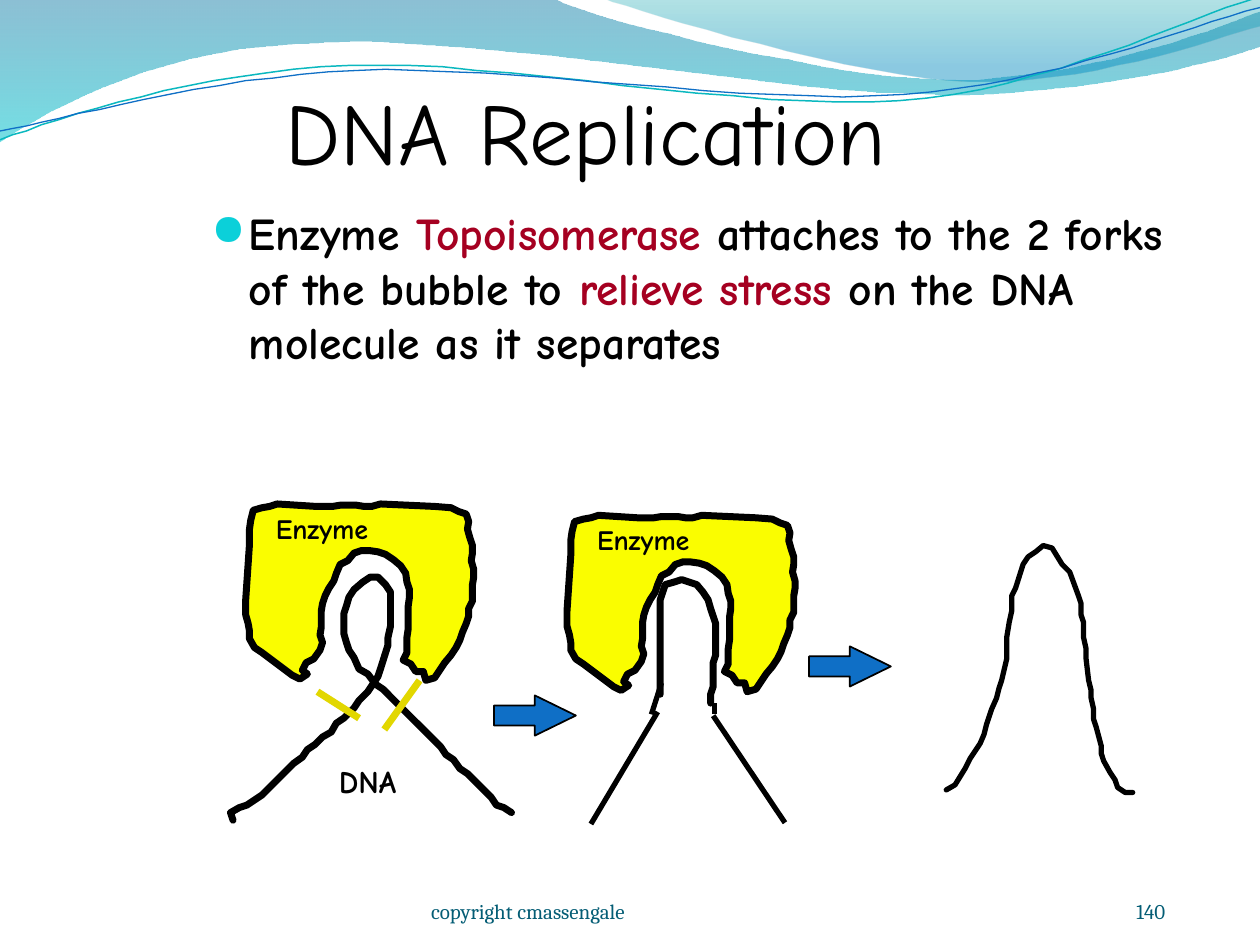
from lxml import etree
from pptx import Presentation
from pptx import util as u
from pptx.dml.color import RGBColor
from pptx.enum import shapes, text
from pptx.oxml import ns

BLACK, RED, BLUE = "000000", "A50021", "0F6FC6"
YELLOW, GOLD, FOOTER = "FAFD00", "E2D700", "045D75"
HAND = "Comic Neue"

# Outline points are hundredths of an inch
UNIT = u.Cm(2.54) / 100

ENZYME = [
    (240, 532), (243, 526), (249, 523), (254, 516), (256, 510), (254, 504),
    (255, 498), (255, 485), (256, 479), (258, 473), (261, 467), (265, 461),
    (267, 455), (270, 448), (276, 445), (281, 439), (287, 437), (293, 437),
    (300, 438), (306, 440), (312, 444), (318, 449), (322, 455), (323, 462),
    (325, 468), (325, 474), (324, 481), (324, 499), (323, 506), (323, 518),
    (320, 524), (326, 527), (330, 533), (336, 533), (338, 540), (345, 538),
    (349, 532), (353, 526), (358, 520), (362, 514), (365, 508), (367, 502),
    (370, 495), (372, 489), (372, 483), (375, 477), (375, 464), (376, 458),
    (376, 452), (374, 445), (375, 439), (375, 433), (373, 427), (371, 420),
    (372, 414), (370, 408), (364, 406), (358, 403), (345, 402), (302, 400),
    (295, 402), (289, 402), (283, 401), (270, 401), (264, 402), (251, 402),
    (220, 400), (214, 402), (208, 403), (201, 405), (199, 413), (198, 420),
    (198, 432), (195, 476), (195, 488), (197, 495), (198, 501), (198, 507),
    (202, 514), (208, 518), (220, 527), (232, 536), (238, 539), (244, 535)]
TWISTED_DNA = [
    (185, 651), (183, 645), (190, 641), (196, 639), (208, 631), (215, 624),
    (233, 606), (240, 601), (244, 595), (250, 591), (256, 585), (263, 581),
    (267, 574), (273, 570), (281, 562), (285, 556), (292, 549), (296, 543),
    (300, 537), (302, 531), (308, 512), (308, 506), (310, 497), (310, 470),
    (306, 464), (300, 458), (294, 458), (288, 462), (281, 468), (277, 474),
    (275, 481), (273, 487), (273, 503), (275, 510), (277, 516), (281, 522),
    (285, 531), (292, 535), (298, 543), (304, 547), (313, 556), (350, 593),
    (354, 599), (360, 603), (365, 610), (371, 614), (390, 633), (394, 639),
    (400, 641), (406, 645)]
CUT_DNA = [
    (524, 551), (524, 476), (526, 470), (528, 464), (535, 462), (541, 460),
    (547, 462), (553, 464), (558, 470), (562, 476), (564, 483), (566, 489),
    (568, 495), (568, 520), (566, 526), (566, 545), (564, 551), (564, 558)]
RELAXED_DNA = [
    (899, 629), (893, 629), (887, 625), (885, 619), (881, 613), (876, 604),
    (874, 598), (874, 592), (870, 577), (868, 571), (868, 563), (866, 554),
    (866, 548), (864, 540), (862, 523), (862, 515), (860, 506), (860, 494),
    (858, 488), (858, 479), (856, 473), (849, 454), (843, 448), (835, 435),
    (828, 433), (822, 438), (816, 442), (812, 448), (806, 467), (803, 473),
    (803, 485), (801, 494), (799, 506), (799, 523), (795, 540), (793, 546),
    (791, 554), (787, 563), (783, 575), (781, 583), (778, 590), (774, 596),
    (770, 602), (766, 610), (758, 623), (751, 627)]


def colour(value):
    return RGBColor.from_string(value)


def add_outline(page, points, line=None, width=1, fill=None, closed=False):
    builder = page.shapes.build_freeform(*points[0], scale=UNIT)
    builder.add_line_segments(points[1:], close=closed)
    shape = builder.convert_to_shape()
    shape.shadow.inherit = False
    if fill:
        shape.fill.solid()
        shape.fill.fore_color.rgb = colour(fill)
    else:
        shape.fill.background()
    if line:
        shape.line.color.rgb = colour(line)
        shape.line.width = u.Pt(width)
        stroke = shape.element.spPr.find(ns.qn("a:ln"))
        stroke.set("cap", "rnd")
        etree.SubElement(stroke, ns.qn("a:round"))
    else:
        shape.line.fill.background()
    return shape


def curve(*points, steps=16):
    """Points along joined cubic curves: a start, then three per curve."""
    result = [points[0]]
    for first in range(0, len(points) - 1, 3):
        a, b, c, d = points[first:first + 4]
        for step in range(1, steps + 1):
            t = step / steps
            weights = (1 - t) ** 3, 3 * t * (1 - t) ** 2, 3 * t * t * (1 - t), t ** 3
            result.append(tuple(sum(w * p[axis] for w, p in zip(weights, (a, b, c, d)))
                                for axis in (0, 1)))
    return result


def add_wave(page, points, stops):
    wave = add_outline(page, points, closed=True)
    wave.fill.gradient()
    wave.fill.gradient_angle = 270
    for stop, (position, value, opacity) in zip(wave.fill.gradient_stops, stops):
        stop.position = position
        stop.color.rgb = colour(value)
    tints = wave.element.spPr.iter(ns.qn("a:srgbClr"))
    for tint, (_, _, opacity) in zip(tints, stops):
        etree.SubElement(tint, ns.qn("a:alpha"), val=str(opacity * 1000))


def add_line(page, start, end, value=BLACK, width=3):
    ends = [round(v * UNIT) for v in (*start, *end)]
    line = page.shapes.add_connector(shapes.MSO_CONNECTOR.STRAIGHT, *ends)
    line.line.color.rgb = colour(value)
    line.line.width = u.Pt(width)
    etree.SubElement(line.element.spPr, ns.qn("a:effectLst"))


def add_arrow(page, left, top):
    arrow = page.shapes.add_shape(shapes.MSO_SHAPE.RIGHT_ARROW,
                                  u.Cm(left), u.Cm(top), u.Cm(1.65), u.Cm(0.81))
    arrow.adjustments[1] = 1.02
    arrow.shadow.inherit = False
    arrow.fill.solid()
    arrow.fill.fore_color.rgb = colour(BLUE)
    arrow.line.color.rgb = colour(BLACK)
    arrow.line.width = u.Pt(1)


def format_span(span, size, value, font=HAND, bold=False):
    span.font.size, span.font.name, span.font.bold = u.Pt(size), font, bold
    span.font.color.rgb = colour(value)


def add_label(page, wording, place, size, value=BLACK, font=HAND, bold=True, wrap=False):
    box = page.shapes.add_textbox(*map(u.Cm, place))
    box.text_frame.text = wording
    box.text_frame.word_wrap = wrap
    format_span(box.text_frame.paragraphs[0].runs[0], size, value, font, bold)
    return box


def add_footer(page, wording, left, width, align):
    frame = add_label(page, wording, (left, 17.36, width, 1.27), 12,
                      FOOTER, "Cambria", False, True).text_frame
    frame.margin_left = frame.margin_right = frame.margin_top = frame.margin_bottom = 0
    frame.vertical_anchor = text.MSO_ANCHOR.BOTTOM
    frame.paragraphs[0].alignment = align


def add_title(page, wording):
    title = page.shapes.title
    title.left, title.top, title.width, title.height = map(u.Cm, (5.51, 1.07, 17.98, 2.74))
    frame = title.text_frame
    frame.text = wording
    frame.auto_size = text.MSO_AUTO_SIZE.NONE
    frame.vertical_anchor = text.MSO_ANCHOR.BOTTOM
    frame.paragraphs[0].alignment = text.PP_ALIGN.LEFT
    format_span(frame.paragraphs[0].runs[0], 50, BLACK)
    page.shapes.element.append(title.element)  # in front of the waves


def add_bullet(page, spans):
    box = page.shapes.add_textbox(*map(u.Cm, (4.01, 4.01, 20.12, 12.9)))
    box.text_frame.word_wrap = True
    para = box.text_frame.paragraphs[0]
    props = para._p.get_or_add_pPr()
    props.set("marL", str(u.Cm(0.76)))
    props.set("indent", str(-u.Cm(0.76)))
    tint = etree.SubElement(props, ns.qn("a:buClr"))
    etree.SubElement(tint, ns.qn("a:srgbClr"), val="0BD0D9")
    etree.SubElement(props, ns.qn("a:buSzPct"), val="95000")
    etree.SubElement(props, ns.qn("a:buChar"), char="●")
    for wording, value in spans:
        span = para.add_run()
        span.text = wording
        format_span(span, 26, value, bold=True)


def add_enzyme(page, right=0, down=0):
    moved = [(x + right, y + down) for x, y in ENZYME]
    add_outline(page, moved, BLACK, 4, YELLOW, closed=True)
    place = 5.31 + right * 0.0254, 10.19 + down * 0.0254, 2.51, 0.91
    add_label(page, "Enzyme", place, 16)


def main():
    deck = Presentation()
    deck.slide_width, deck.slide_height = u.Cm(25.4), u.Cm(19.05)
    page = deck.slides.add_slide(deck.slide_layouts[5])

    # Waves along the top
    lower = curve((440, -1), (476, 17), (664, 63), (758, 63), (853, 63), (958, 26), (1000, 9))
    lower += curve((1001, 36), (983, 44), (870, 76), (746, 75), (622, 75), (382, 28),
                   (257, 34), (129, 36), (46, 83), (-1, 113))
    add_wave(page, lower + [(0, 0)], [(0, "0074A1", 45), (1, "00C6CF", 55)])
    upper = curve((479, -1), (509, 11), (682, 62), (769, 65), (856, 69), (961, 32), (1000, 21))
    add_wave(page, upper + [(1000, 0)], [(0, "00A1A9", 30), (0.8, "008BBF", 45)])
    add_outline(page, curve((0, 111), (48, 93), (158, 57), (277, 52), (395, 47), (593, 89),
                            (713, 80), (833, 71), (938, 15), (998, -2)), "0AB8BF", 0.85)
    add_outline(page, curve((0, 104), (47, 96), (164, 61), (283, 56), (403, 51), (597, 84),
                            (717, 75), (836, 67), (941, 21), (1000, 6)), BLUE, 0.75)

    # Wording
    add_title(page, "DNA Replication")
    add_bullet(page, [("Enzyme ", BLACK), ("Topoisomerase", RED),
                      (" attaches to the 2 forks of the bubble to ", BLACK),
                      ("relieve stress", RED),
                      (" on the DNA molecule as it separates", BLACK)])
    add_footer(page, "copyright cmassengale", 8.69, 8.05, text.PP_ALIGN.LEFT)
    add_footer(page, "140", 18.21, 5.28, text.PP_ALIGN.RIGHT)

    # Twisted strand, with the two cuts
    add_outline(page, TWISTED_DNA, BLACK, 4)
    add_line(page, (305, 579), (333, 540), GOLD, 4)
    add_line(page, (252, 549), (285, 570), GOLD, 4)
    add_enzyme(page)
    add_label(page, "DNA", (6.58, 15.24, 2.41, 1.27), 18)

    # Relaxed strand
    add_arrow(page, 16.31, 13.03)
    add_outline(page, RELAXED_DNA, BLACK, 3)

    # Cut strand
    add_outline(page, CUT_DNA, BLACK, 4)
    add_arrow(page, 9.96, 14.02)
    add_enzyme(page, 255, 9)
    for start, end in [((469, 654), (522, 565)), ((623, 653), (566, 568)),
                       ((525, 542), (517, 567)), ((567, 558), (567, 567))]:
        add_line(page, start, end)

    deck.save("out.pptx")


if __name__ == "__main__":
    main()
